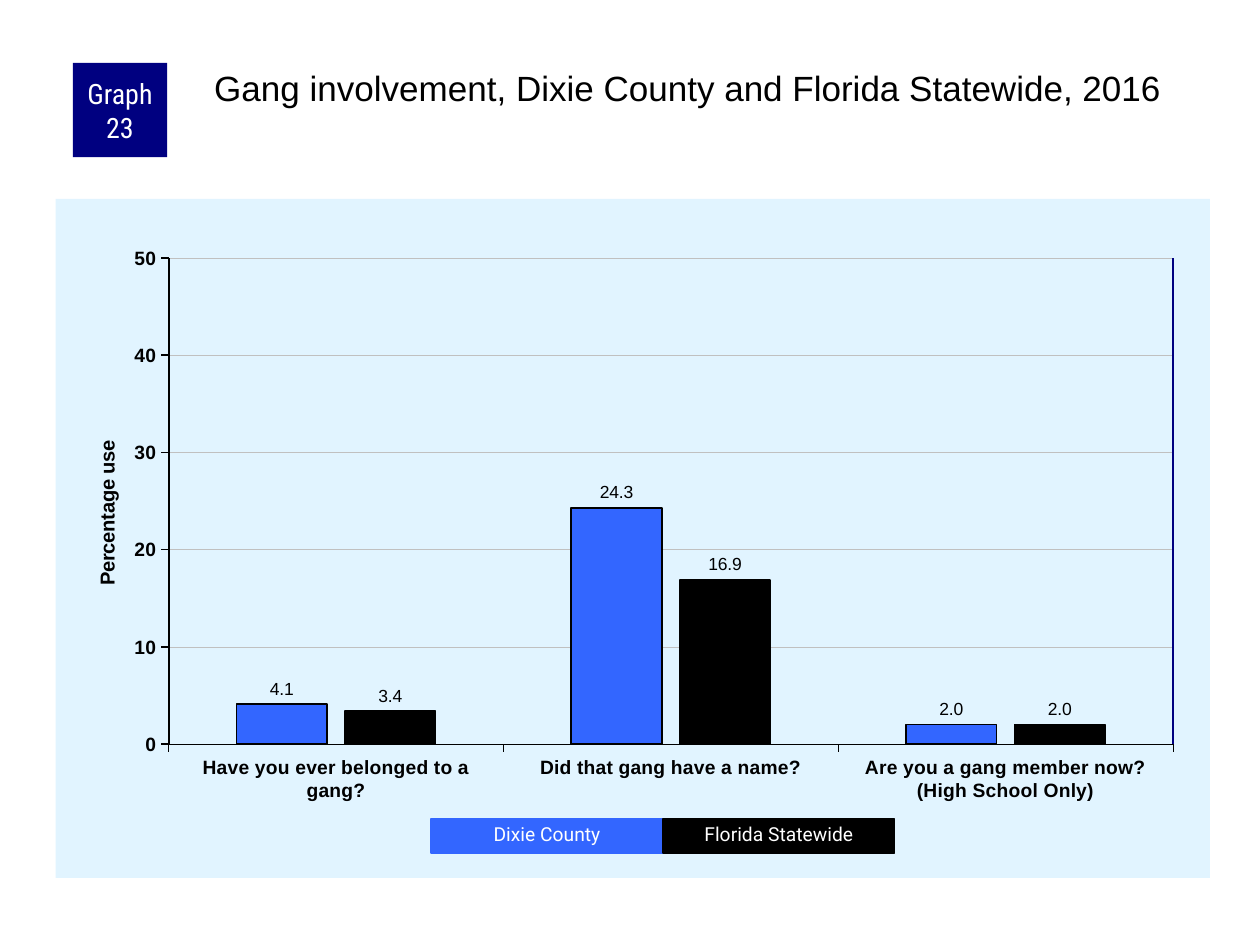
from lxml.etree import SubElement
from pptx import Presentation
from pptx.chart.data import CategoryChartData
from pptx.dml.color import RGBColor
from pptx.enum.chart import XL_CHART_TYPE, XL_LABEL_POSITION, XL_TICK_MARK
from pptx.enum.shapes import MSO_CONNECTOR, MSO_SHAPE
from pptx.enum.text import MSO_ANCHOR, MSO_AUTO_SIZE, PP_ALIGN
from pptx.oxml import parse_xml
from pptx.oxml.ns import nsdecls, qn
from pptx.util import Cm, Pt

HUES = {"navy": "000080", "blue": "3366FF", "black": "000000",
        "white": "FFFFFF", "pale": "E1F4FF", "grey": "C0C0C0"}
PLOT = {"x": 0.098, "y": 0.087, "w": 0.87, "h": 0.716}
CATS = ["Have you ever belonged to a gang?", "Did that gang have a name?",
        "Are you a gang member now?\n(High School Only)"]
ROWS = [("Dixie County", "blue", (4.1, 24.3, 2.0)),
        ("Florida Statewide", "black", (3.4, 16.9, 2.0))]


def hue(name):
    return RGBColor.from_string(HUES[name])


def style(font, size, name="black", face="Arial", bold=False):
    font.name, font.size, font.bold = face, Pt(size), bold
    font.color.rgb = hue(name)


def paint(fill, name):
    fill.solid()
    fill.fore_color.rgb = hue(name)


def stroke(line, name, width):
    line.color.rgb = hue(name)
    line.width = Pt(width)


def write(frame, text, size, name, face, align=PP_ALIGN.LEFT):
    frame.word_wrap = True
    para = frame.paragraphs[0]
    para.alignment = align
    run = para.add_run()
    run.text = text
    style(run.font, size, name, face)
    return para


def pad(frame, left, top, right, bottom):
    frame.margin_left, frame.margin_top = Cm(left), Cm(top)
    frame.margin_right, frame.margin_bottom = Cm(right), Cm(bottom)


def block(slide, box, name):
    shape = slide.shapes.add_shape(MSO_SHAPE.RECTANGLE, *map(Cm, box))
    shape.shadow.inherit = False
    paint(shape.fill, name)
    return shape


def place(node, index, spots, inner=False):
    old = node.find(qn("c:layout"))
    if old is not None:
        node.remove(old)
    layout = parse_xml(f"<c:layout {nsdecls('c')}><c:manualLayout/></c:layout>")
    manual = layout[0]
    if inner:
        SubElement(manual, qn("c:layoutTarget")).set("val", "inner")
    for key in "xy":
        SubElement(manual, qn(f"c:{key}Mode")).set("val", "edge")
    for key, value in spots.items():
        SubElement(manual, qn(f"c:{key}")).set("val", str(value))
    node.insert(index, layout)


def add_head(slide, box):
    left, top, width, height = box
    side = 1.9
    badge = block(slide, (left, top, side, side), "navy")
    badge.line.fill.background()
    frame = badge.text_frame
    pad(frame, 0.13, 0, 0.13, 0)
    frame.vertical_anchor = MSO_ANCHOR.MIDDLE
    write(frame, "Graph 23", 16, "white", "Roboto Condensed", PP_ALIGN.CENTER)
    shift = 2.77
    title = slide.shapes.add_textbox(
        *map(Cm, (left + shift, top, width - shift, height)))
    pad(title.text_frame, 0.08, 0.08, 0, 0)
    write(title.text_frame, "Gang involvement, Dixie County and Florida Statewide, 2016",
          20, "black", "Arial")


def add_bars(slide, box):
    data = CategoryChartData(number_format="0.0")
    data.categories = CATS
    for name, _, vals in ROWS:
        data.add_series(name, vals)
    chart = slide.shapes.add_chart(
        XL_CHART_TYPE.COLUMN_CLUSTERED, *map(Cm, box), data).chart
    chart.has_legend = chart.has_title = False
    style(chart.font, 11.5)
    space = chart._chartSpace
    fill = parse_xml(
        f'<c:spPr {nsdecls("c", "a")}><a:solidFill><a:srgbClr val="{HUES["pale"]}"/>'
        "</a:solidFill><a:ln><a:noFill/></a:ln></c:spPr>")
    space.find(qn("c:chart")).addnext(fill)
    place(space.chart.plotArea, 0, PLOT, True)

    plot = chart.plots[0]
    plot.gap_width, plot.overlap = 150, -20
    plot.vary_by_categories = False
    for series, (_, name, _) in zip(plot.series, ROWS):
        paint(series.format.fill, name)
        stroke(series.format.line, "black", 1)
        labels = series.data_labels
        labels.show_value = True
        labels.number_format, labels.number_format_is_linked = "0.0", False
        labels.position = XL_LABEL_POSITION.OUTSIDE_END
        style(labels.font, 10)

    scale = chart.value_axis
    for axis, width in ((chart.category_axis, 0.25), (scale, 1)):
        axis.major_tick_mark = XL_TICK_MARK.OUTSIDE
        axis.minor_tick_mark = XL_TICK_MARK.NONE
        style(axis.tick_labels.font, 11, bold=True)
        stroke(axis.format.line, "black", width)
    scale.minimum_scale, scale.maximum_scale, scale.major_unit = 0, 50, 10
    scale.tick_labels.number_format = "0"
    scale.tick_labels.number_format_is_linked = False
    stroke(scale.major_gridlines.format.line, "grey", 0.25)
    title = scale.axis_title
    run = title.text_frame.paragraphs[0].add_run()
    run.text = "Percentage use"
    style(run.font, 11.5, bold=True)
    place(title._element, 1, {"x": 0.03, "y": 0.35})


def add_edge(slide, box):
    left, top, width, height = box
    x = left + width * (PLOT["x"] + PLOT["w"])
    y = top + height * PLOT["y"]
    edge = slide.shapes.add_connector(
        MSO_CONNECTOR.STRAIGHT, Cm(x), Cm(y), Cm(x), Cm(y + height * PLOT["h"]))
    stroke(edge.line, "navy", 1)
    SubElement(edge._element.spPr, qn("a:effectLst"))


def add_key(slide, box):
    left, top, width, height = box
    step = width / len(ROWS)
    for i, (text, name, _) in enumerate(ROWS):
        shape = block(slide, (left + i * step, top, step, height), name)
        stroke(shape.line, name, 0.75)
        frame = shape.text_frame
        frame.vertical_anchor = MSO_ANCHOR.TOP
        para = write(frame, text, 11, "white", "Roboto", PP_ALIGN.CENTER)
        para.line_spacing = 0.9
        frame.auto_size = MSO_AUTO_SIZE.SHAPE_TO_FIT_TEXT


def main():
    deck = Presentation()
    deck.slide_width, deck.slide_height = Cm(25.4), Cm(19.05)
    slide = deck.slides.add_slide(deck.slide_layouts[6])
    panel = (1.12, 4.01, 23.27, 13.69)
    add_bars(slide, panel)
    add_edge(slide, panel)
    add_head(slide, (1.47, 1.27, 22.89, 2.11))
    add_key(slide, (8.69, 16.51, 9.35, 0.69))
    deck.save("out.pptx")


if __name__ == "__main__":
    main()
